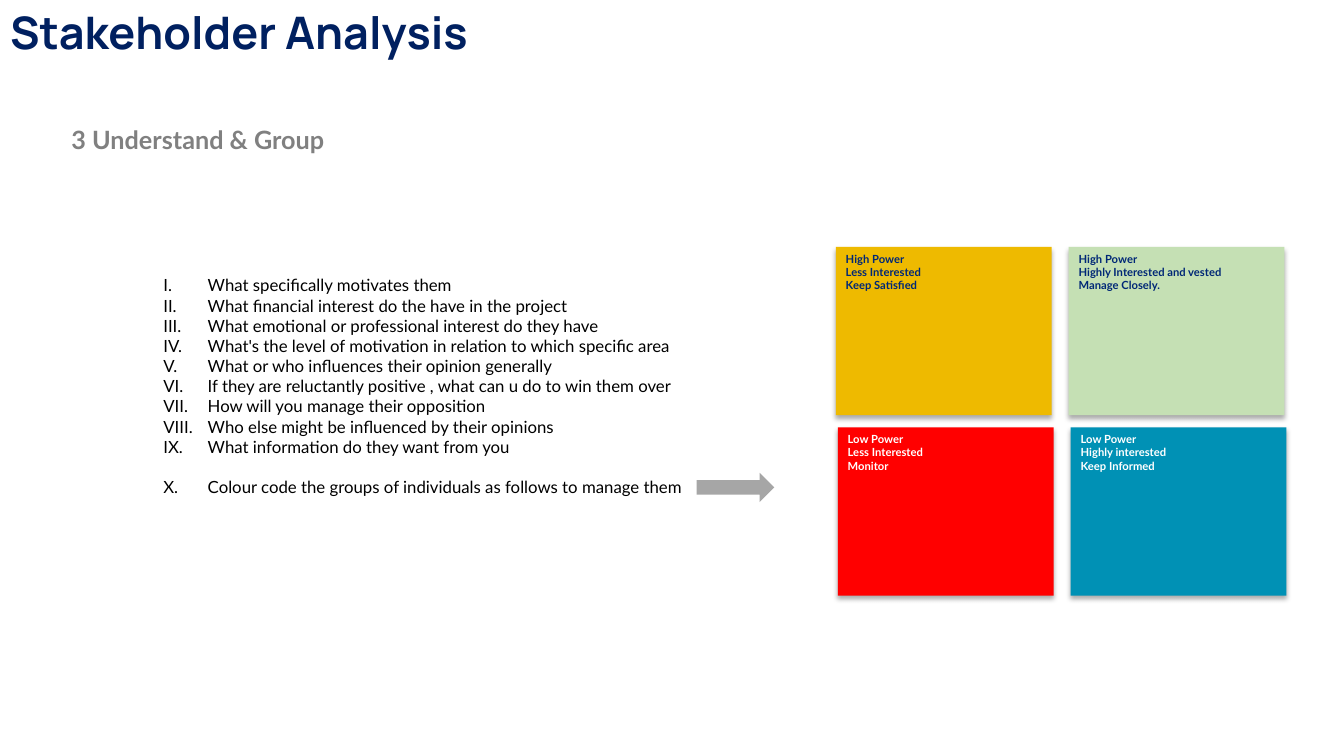
"""Build the Stakeholder Analysis slide with its questions and power/interest grid."""
from lxml import etree
from pptx import Presentation
from pptx.dml.color import RGBColor
from pptx.enum.shapes import MSO_SHAPE
from pptx.enum.text import MSO_ANCHOR, MSO_AUTO_SIZE, PP_ALIGN
from pptx.oxml.ns import qn
from pptx.util import Inches, Pt

RECT, ARROW = MSO_SHAPE.RECTANGLE, MSO_SHAPE.RIGHT_ARROW
TOP, LEFT, NO_FIT = MSO_ANCHOR.TOP, PP_ALIGN.LEFT, MSO_AUTO_SIZE.NONE
NAVY, INK = RGBColor(0x00, 0x20, 0x60), RGBColor(0x00, 0x27, 0x76)
GREY, SILVER = RGBColor(0x80, 0x80, 0x80), RGBColor(0xA6, 0xA6, 0xA6)
BLACK, WHITE = RGBColor(0, 0, 0), RGBColor(0xFF, 0xFF, 0xFF)
GOLD, GREEN = RGBColor(0xEE, 0xBA, 0x00), RGBColor(0xC5, 0xE0, 0xB4)
RED, TEAL = RGBColor(0xFF, 0, 0), RGBColor(0x00, 0x91, 0xB5)

TITLE = "Stakeholder Analysis"
SUBTITLE = "3 Understand & Group"
QUESTIONS = [
    "What specifically motivates them",
    "What financial interest do the have in the project",
    "What emotional or professional interest do they have",
    "What's the level of motivation in relation to which specific area",
    "What or who influences their opinion generally",
    "If they are reluctantly positive , what can u do to win them over",
    "How will you manage their opposition",
    "Who else might be influenced by their opinions",
    "What information do they want from you",
    "Colour code the groups of individuals as follows to manage them",
]
QUADRANTS = [
    [(["High Power", "Less Interested", "Keep Satisfied"], GOLD, INK),
     (["High Power", "Highly Interested and vested", "Manage Closely."], GREEN, INK)],
    [(["Low Power", "Less Interested", "Monitor"], RED, WHITE),
     (["Low Power", "Highly interested", "Keep Informed"], TEAL, WHITE)],
]
GRID_X, GRID_Y, COL_STEP, ROW_STEP = 8.29, 2.45, 2.31, 1.79
ROW_SHIFT, CELL_W, CELL_H = 0.02, 2.14, 1.67
INDENT = Inches(0.44)


def place(sp, x, y, w, h):
    sp.left, sp.top, sp.width, sp.height = (Inches(v) for v in (x, y, w, h))


def write(sp, lines, name, size, color, bold):
    tf = sp.text_frame
    tf.word_wrap, tf.auto_size, tf.vertical_anchor = True, NO_FIT, TOP
    tf.text = "\n".join(lines)
    for p in tf.paragraphs:
        p.alignment, p.space_before = LEFT, Pt(0)
        p.font.name, p.font.size, p.font.bold = name, Pt(size), bold
        p.font.color.rgb = color
    return tf.paragraphs


def number(p):
    pPr = p._p.get_or_add_pPr()
    pPr.set("marL", str(INDENT))
    pPr.set("indent", str(-INDENT))
    font = etree.Element(qn("a:buFont"), typeface="Lato")
    roman = etree.Element(qn("a:buAutoNum"), type="romanUcPeriod")
    at = pPr.index(pPr.find(qn("a:defRPr")))
    pPr.insert(at, roman)
    pPr.insert(at, font)


def add_filled(s, kind, box, fill):
    sp = s.shapes.add_shape(kind, *(Inches(v) for v in box))
    sp.shadow.inherit = False
    sp.fill.solid()
    sp.fill.fore_color.rgb = fill
    sp.line.fill.background()
    return sp


def drop_shadow(sp):
    effects = sp._element.spPr.find(qn("a:effectLst"))
    shadow = etree.SubElement(effects, qn("a:outerShdw"), blurRad=str(Pt(3.5)),
                              dist=str(Pt(2.2)), dir="5400000", rotWithShape="0")
    black = etree.SubElement(shadow, qn("a:srgbClr"), val="000000")
    etree.SubElement(black, qn("a:alpha"), val="32000")


def main():
    prs = Presentation()
    prs.slide_width, prs.slide_height = Inches(13.33), Inches(7.5)
    s = prs.slides.add_slide(prs.slide_layouts[1])
    title, body = s.placeholders

    place(title, 0, 0, 8.61, 0.64)
    write(title, [TITLE], "Manrope", 32, NAVY, True)
    subtitle = s.shapes.add_textbox(0, 0, 0, 0)
    place(subtitle, 0.61, 1.18, 3.61, 0.4)
    write(subtitle, [SUBTITLE], "Lato", 18, GREY, True)

    place(body, 1.52, 2.68, 7.22, 2.52)
    questions = write(body, QUESTIONS, "Lato", 12, BLACK, False)
    for p in questions:
        number(p)
    questions[-1].space_before = Pt(14.4)

    for row, cells in enumerate(QUADRANTS):
        for col, (lines, fill, color) in enumerate(cells):
            x = GRID_X + col * COL_STEP + row * ROW_SHIFT
            y = GRID_Y + row * ROW_STEP
            sp = add_filled(s, RECT, (x, y, CELL_W, CELL_H), fill)
            drop_shadow(sp)
            write(sp, lines, "Lato", 8, color, True)

    add_filled(s, ARROW, (6.91, 4.69, 0.77, 0.29), SILVER)
    prs.save("out.pptx")


if __name__ == "__main__":
    main()
